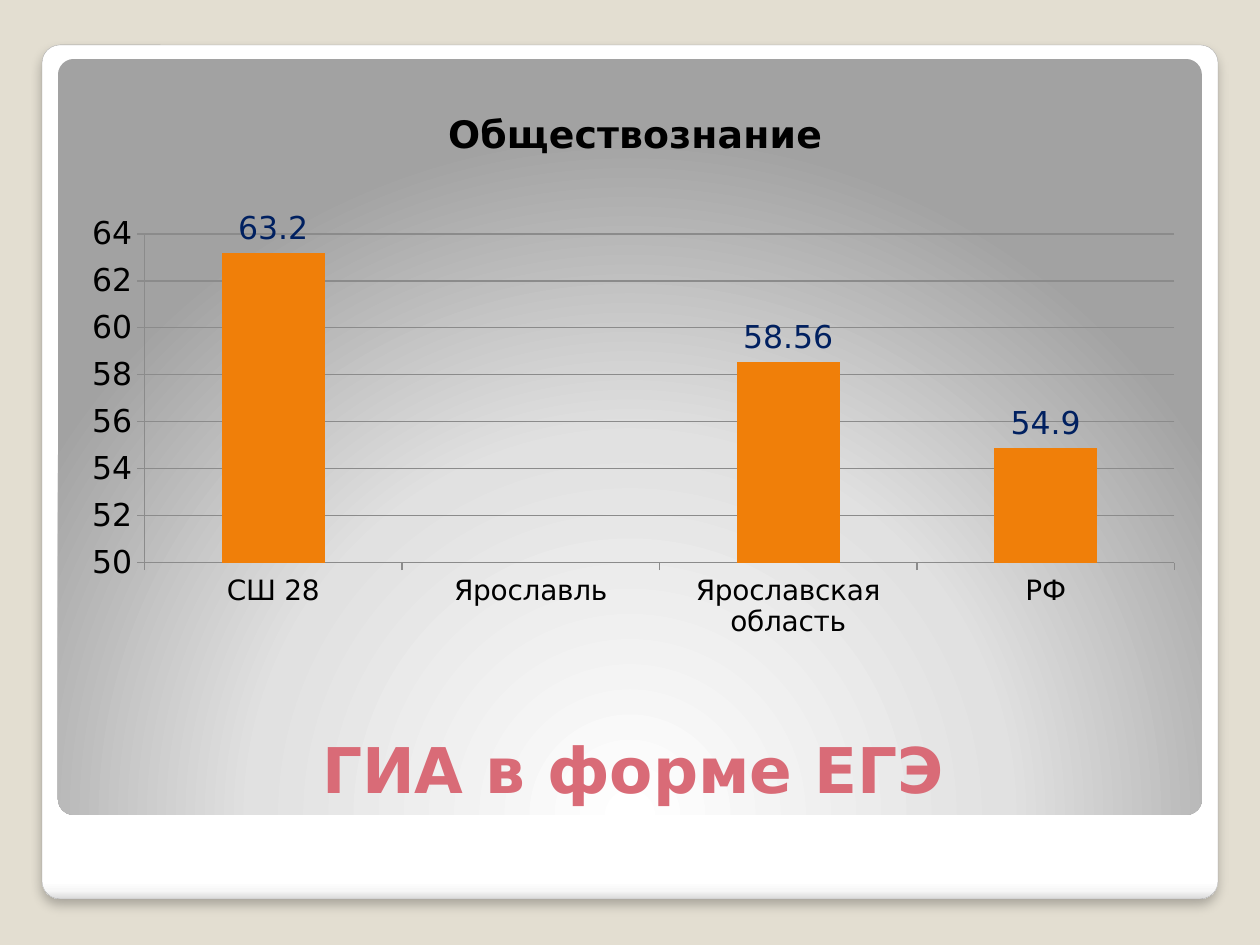
from lxml import etree
from pptx import Presentation
from pptx.chart.data import CategoryChartData
from pptx.dml.color import RGBColor
from pptx.enum.chart import XL_CHART_TYPE as CHART, XL_LABEL_POSITION as LABEL, XL_TICK_MARK as TICK
from pptx.enum.shapes import MSO_SHAPE as SHAPE
from pptx.enum.text import MSO_ANCHOR as ANCHOR, PP_ALIGN as ALIGN
from pptx.oxml import parse_xml
from pptx.oxml.ns import nsdecls, qn
from pptx.util import Emu, Pt

FONT = "DejaVu Sans"
BEIGE = RGBColor(0xE3, 0xDE, 0xD1)
EDGE = RGBColor(0xA4, 0xA4, 0xA4)
ROSE = RGBColor(0xD9, 0x6B, 0x77)
ORANGE = RGBColor(0xF0, 0x7F, 0x09)
NAVY = RGBColor(0x00, 0x20, 0x60)
GRID = RGBColor(0x8B, 0x8B, 0x8B)
BLACK = RGBColor(0, 0, 0)


def px(n):
    return Emu(round(n * 914400 / 126))


def style(font, size, color, bold=False):
    font.name, font.size, font.bold = FONT, Pt(size), bold
    font.color.rgb = color


def set_gradient(sp, stops, direction):
    """Replace the fill of sp; stops are (percent, hex) pairs."""
    gs = "".join(f'<a:gs pos="{pos * 1000}"><a:srgbClr val="{color}"/></a:gs>' for pos, color in stops)
    sp.fill.background()
    old = sp._element.spPr.find(qn("a:noFill"))
    old.getparent().replace(old, parse_xml(
        f'<a:gradFill {nsdecls("a")} rotWithShape="1"><a:gsLst>{gs}</a:gsLst>{direction}</a:gradFill>'))


def add_panel(slide, box, stops, direction):
    sp = slide.shapes.add_shape(SHAPE.ROUNDED_RECTANGLE, *map(px, box))
    sp.adjustments[0] = 0.021
    sp.shadow.inherit = False
    sp.line.fill.background()
    set_gradient(sp, stops, direction)
    return sp


def add_frame(slide, box):
    # White card with a soft shadow
    x, y, w, h = box
    card = add_panel(slide, box, [(0, "FFFFFF"), (98, "FFFFFF"), (99, "F7F7F7"), (100, "DADADA")],
                     '<a:lin ang="5400000" scaled="0"/>')
    card.line.color.rgb = EDGE
    card.line.width = Pt(0.16)
    effects = card._element.spPr.find(qn("a:effectLst"))
    effects.append(parse_xml(
        f'<a:outerShdw {nsdecls("a")} blurRad="{Pt(6)}" dist="{Pt(4)}" dir="5400000" algn="t" rotWithShape="0">'
        '<a:srgbClr val="000000"><a:alpha val="25000"/></a:srgbClr></a:outerShdw>'))
    # Grey inner panel, lit from below
    add_panel(slide, (x + 16, y + 14, w - 32, 756), [(0, "FFFFFF"), (55, "E1E1E1"), (100, "A2A2A2")],
              '<a:path path="circle"><a:fillToRect l="50000" t="175000" r="50000" b="-75000"/></a:path>')


def place_title(slide, box, text):
    title = slide.shapes.title
    title.left, title.top, title.width, title.height = map(px, box)
    slide.shapes._spTree.append(title._element)  # in front of the panels
    tf = title.text_frame
    tf.text = text
    tf.vertical_anchor = ANCHOR.BOTTOM
    tf.margin_bottom = 0
    p = tf.paragraphs[0]
    p.alignment = ALIGN.CENTER
    style(p.runs[0].font, 36, ROSE, True)


def set_layout(parent, **values):
    """Give a chart title or plot area a fixed place, as fractions of the chart."""
    for old in parent.findall(qn("c:layout")):
        parent.remove(old)
    layout = etree.Element(qn("c:layout"))
    manual = etree.SubElement(layout, qn("c:manualLayout"))
    if "w" in values:
        etree.SubElement(manual, qn("c:layoutTarget")).set("val", "inner")
    for key in ("xMode", "yMode"):
        etree.SubElement(manual, qn(f"c:{key}")).set("val", "edge")
    for key, value in values.items():
        etree.SubElement(manual, qn(f"c:{key}")).set("val", str(value))
    text = parent.find(qn("c:tx"))
    parent.insert(0 if text is None else 1, layout)


def add_score_chart(slide, box, title, scores):
    data = CategoryChartData()
    data.categories = list(scores)
    data.add_series("Series 1", list(scores.values()))
    chart = slide.shapes.add_chart(CHART.COLUMN_CLUSTERED, *map(px, box), data).chart
    style(chart.font, 18, BLACK)
    chart.has_legend = False

    # Heading
    chart.has_title = True
    tf = chart.chart_title.text_frame
    tf.text = title
    style(tf.paragraphs[0].runs[0].font, 21.6, BLACK, True)
    chart.chart_title.include_in_layout = False
    set_layout(chart.chart_title._element, x=0.33, y=0.05)
    set_layout(chart._chartSpace.chart.plotArea, x=0.067, y=0.279, w=0.913, h=0.57)

    # Axes
    for axis, size in ((chart.category_axis, 16), (chart.value_axis, 18)):
        axis.major_tick_mark = TICK.OUTSIDE
        axis.format.line.color.rgb = GRID
        style(axis.tick_labels.font, size, BLACK)
    axis = chart.value_axis
    axis.minimum_scale, axis.maximum_scale, axis.major_unit = 50, 64, 2
    axis.has_major_gridlines = True
    axis.major_gridlines.format.line.color.rgb = GRID

    # Columns and their values
    plot = chart.plots[0]
    plot.gap_width = 150
    plot.vary_by_categories = False
    series = plot.series[0]
    series.format.fill.solid()
    series.format.fill.fore_color.rgb = ORANGE
    labels = series.data_labels
    labels.show_value = True
    labels.position = LABEL.OUTSIDE_END
    style(labels.font, 18, NAVY)


def main():
    prs = Presentation()
    prs.slide_width, prs.slide_height = px(1260), px(945)
    slide = prs.slides.add_slide(prs.slide_layouts[5])
    slide.background.fill.solid()
    slide.background.fill.fore_color.rgb = BEIGE
    add_frame(slide, (42, 45, 1176, 854))
    place_title(slide, (69, 659, 1128, 147), "ГИА в форме ЕГЭ")
    add_score_chart(slide, (69, 73, 1128, 577), "Обществознание",
                    {"СШ 28": 63.2, "Ярославль": None, "Ярославская область": 58.56, "РФ": 54.9})
    prs.save("out.pptx")


if __name__ == "__main__":
    main()
